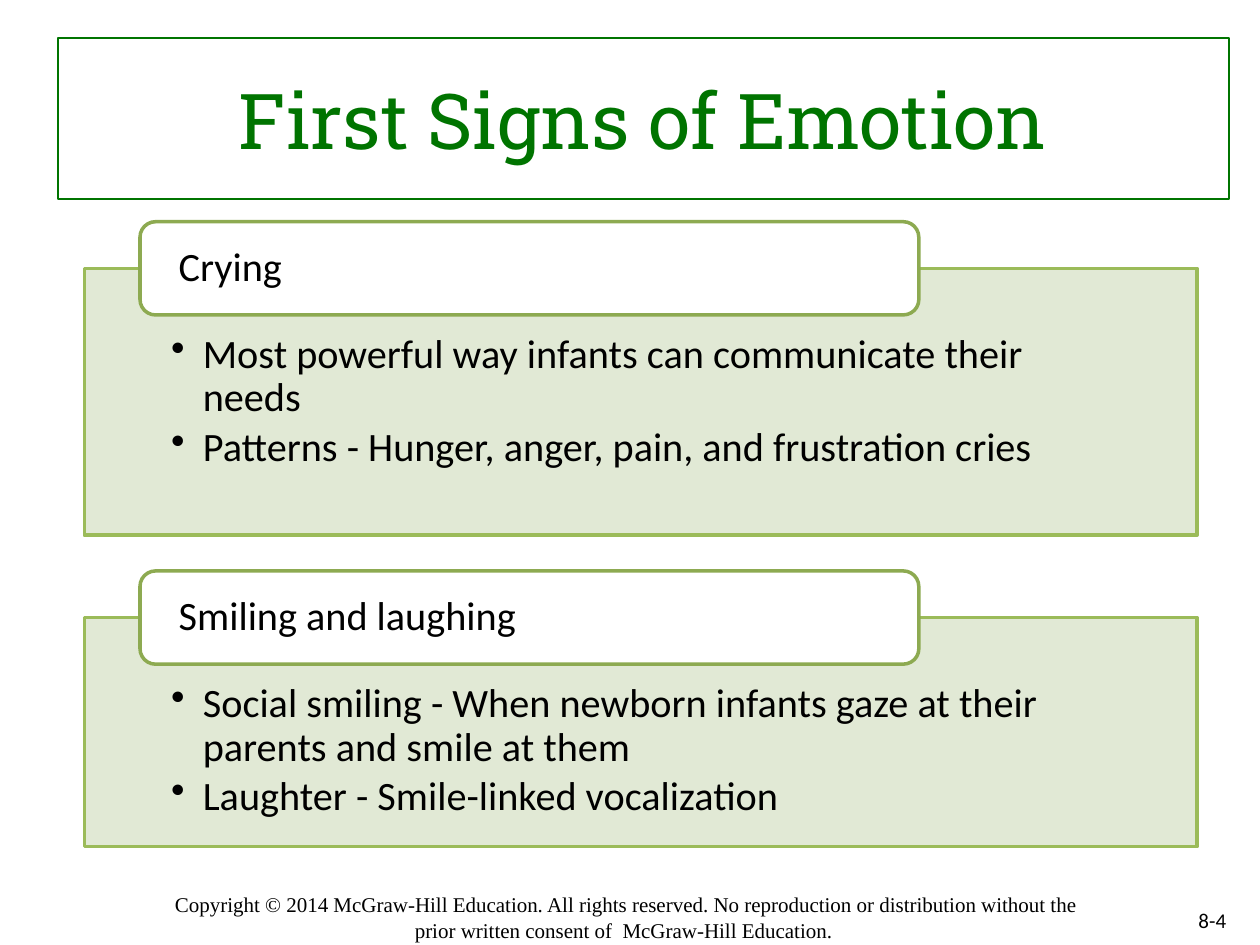
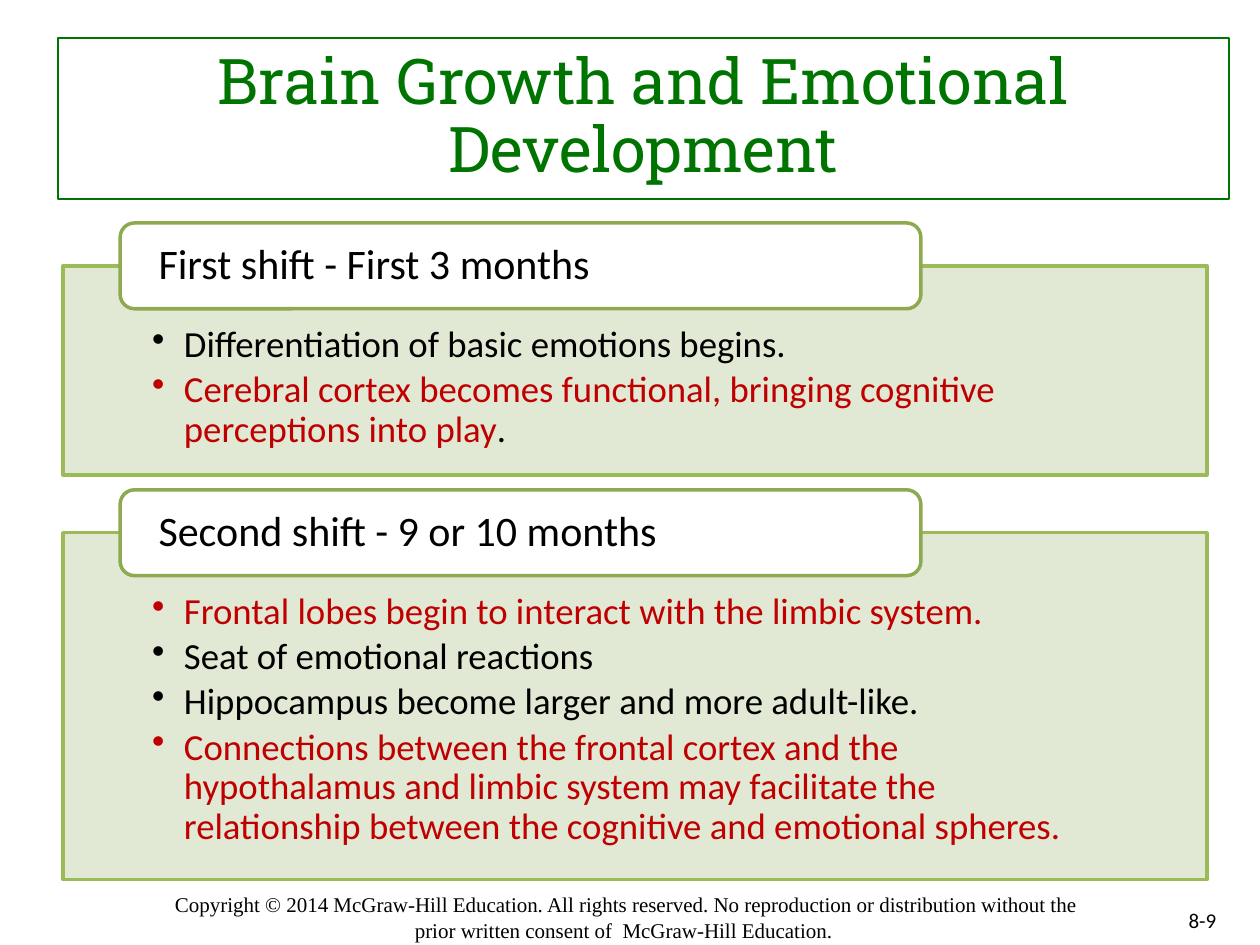
from lxml import etree
from pptx import Presentation
from pptx.dml.color import RGBColor
from pptx.enum.shapes import MSO_SHAPE
from pptx.enum.text import MSO_ANCHOR, MSO_AUTO_SIZE, PP_ALIGN
from pptx.oxml.ns import qn
from pptx.util import Cm, Pt

RECT, ROUND = MSO_SHAPE.RECTANGLE, MSO_SHAPE.ROUNDED_RECTANGLE
LEFT, MID, RIGHT = PP_ALIGN.LEFT, PP_ALIGN.CENTER, PP_ALIGN.RIGHT
TOP, CENTER = MSO_ANCHOR.TOP, MSO_ANCHOR.MIDDLE
FIXED = MSO_AUTO_SIZE.NONE

HUE = {
    "title": "007400",
    "panel": "DEE7D1",
    "edge": "9BBB59",
    "rim": "8DAA51",
    "white": "FFFFFF",
    "black": "000000",
    "red": "C00000",
}
NOTICE = (
    "Copyright © 2014 McGraw-Hill Education. All rights reserved. "
    "No reproduction or distribution without the prior written consent "
    "of  McGraw-Hill Education. "
)

PAGES = [
    {
        "title": "First Signs of Emotion", "size": 44, "lead": 1,
        "num": "8-4", "shift": 19.05,
        "left": 1.7, "wide": 22.43, "tab": 1.88, "foot": 0.46,
        "head": 23, "body": 23,
        "cards": [
            ("Crying", 5.41, 5.38, [
                [("Most powerful way infants can communicate their needs", "black")],
                [("Patterns - Hunger, anger, pain, and frustration cries", "black")],
            ]),
            ("Smiling and laughing", 12.45, 4.62, [
                [("Social smiling - When newborn infants gaze at their "
                  "parents and smile at them", "black")],
                [("Laughter - Smile-linked vocalization", "black")],
            ]),
        ],
    },
    {
        "title": "Brain Growth and Emotional Development", "size": 36, "lead": 0.9,
        "num": "8-9", "shift": 18.85,
        "left": 1.27, "wide": 23.06, "tab": 1.73, "foot": 0.41,
        "head": 24, "body": 21,
        "cards": [
            ("First shift - First 3 months", 5.36, 4.22, [
                [("Differentiation of basic emotions begins.", "black")],
                [("Cerebral cortex becomes functional, bringing cognitive "
                  "perceptions into play", "red"), (".", "black")],
            ]),
            ("Second shift - 9 or 10 months", 10.74, 6.99, [
                [("Frontal lobes begin to interact with the limbic system.", "red")],
                [("Seat of emotional reactions", "black")],
                [("Hippocampus become larger and more adult-like.", "black")],
                [("Connections between the frontal cortex and the hypothalamus "
                  "and limbic system may facilitate the relationship between "
                  "the cognitive and emotional spheres.", "red")],
            ]),
        ],
    },
]


def write(shape, paras, size, font="Calibri", align=LEFT, anchor=TOP,
          pads=(0.25, 0.13, 0.25, 0.13), lead=1, after=0, dots=False):
    frame = shape.text_frame
    frame.word_wrap = True
    frame.auto_size = FIXED
    frame.vertical_anchor = anchor
    (frame.margin_left, frame.margin_top,
     frame.margin_right, frame.margin_bottom) = map(Cm, pads)
    for i, parts in enumerate(paras):
        para = frame.add_paragraph() if i else frame.paragraphs[0]
        if dots:
            props = para._p.get_or_add_pPr()
            props.set("marL", str(Cm(0.64)))
            props.set("indent", str(-Cm(0.64)))
            etree.SubElement(props, qn("a:buChar")).set("char", "•")
            para.level = 1
        para.alignment = align
        para.line_spacing = lead
        para.space_before = Pt(0)
        para.space_after = Pt(after)
        for text, hue in parts:
            run = para.add_run()
            run.text = text
            run.font.name = font
            run.font.size = Pt(size)
            run.font.color.rgb = RGBColor.from_string(HUE[hue])


def block(slide, kind, box, fill, line):
    shape = slide.shapes.add_shape(kind, *map(Cm, box))
    shape.shadow.inherit = False
    shape.fill.solid()
    shape.fill.fore_color.rgb = RGBColor.from_string(HUE[fill])
    shape.line.color.rgb = RGBColor.from_string(HUE[line])
    shape.line.width = Pt(2)
    return shape


deck = Presentation()
deck.slide_width, deck.slide_height = Cm(25.4), Cm(19.05)

for page in PAGES:
    slide = deck.slides.add_slide(deck.slide_layouts[5])

    note = slide.shapes.add_textbox(Cm(3.23), Cm(17.98), Cm(18.8), Cm(1.02))
    write(note, [[(NOTICE, "black")]], 12, font="Times New Roman",
          align=MID, pads=(0, 0, 0, 0))

    title = slide.shapes.title
    title.left, title.top, title.width, title.height = map(Cm, (1.17, 0.76, 23.6, 3.25))
    title.line.color.rgb = RGBColor.from_string(HUE["title"])
    title.line.width = Pt(1.25)
    write(title, [[(page["title"], "title")]], page["size"], font="Roboto Slab",
          align=MID, anchor=CENTER, lead=page["lead"])

    num = slide.shapes.add_textbox(Cm(page["shift"]), Cm(18.03), Cm(5.92), Cm(1.02))
    write(num, [[(page["num"], "black")]], 12, align=RIGHT, anchor=CENTER)

    left, wide, tab = page["left"], page["wide"], page["tab"]
    side = 0.078 * wide
    for head, top, high, items in page["cards"]:
        panel = block(slide, RECT, (left, top, wide, high), "panel", "edge")
        tint = panel.fill._xPr.find(qn("a:solidFill"))[0]
        etree.SubElement(tint, qn("a:alpha")).set("val", "90000")
        write(panel, items, page["body"], pads=(side, 0.7 * tab, side, page["foot"]),
              lead=0.9, after=0.15 * page["body"], dots=True)

        label = block(slide, ROUND,
                      (left + 0.05 * wide, top - tab / 2, 0.7 * wide, tab),
                      "white", "rim")
        write(label, [[(head, "black")]], page["head"], anchor=CENTER,
              pads=(0.69, 0.1, 0.69, 0.1), lead=0.9)

deck.save("out.pptx")
